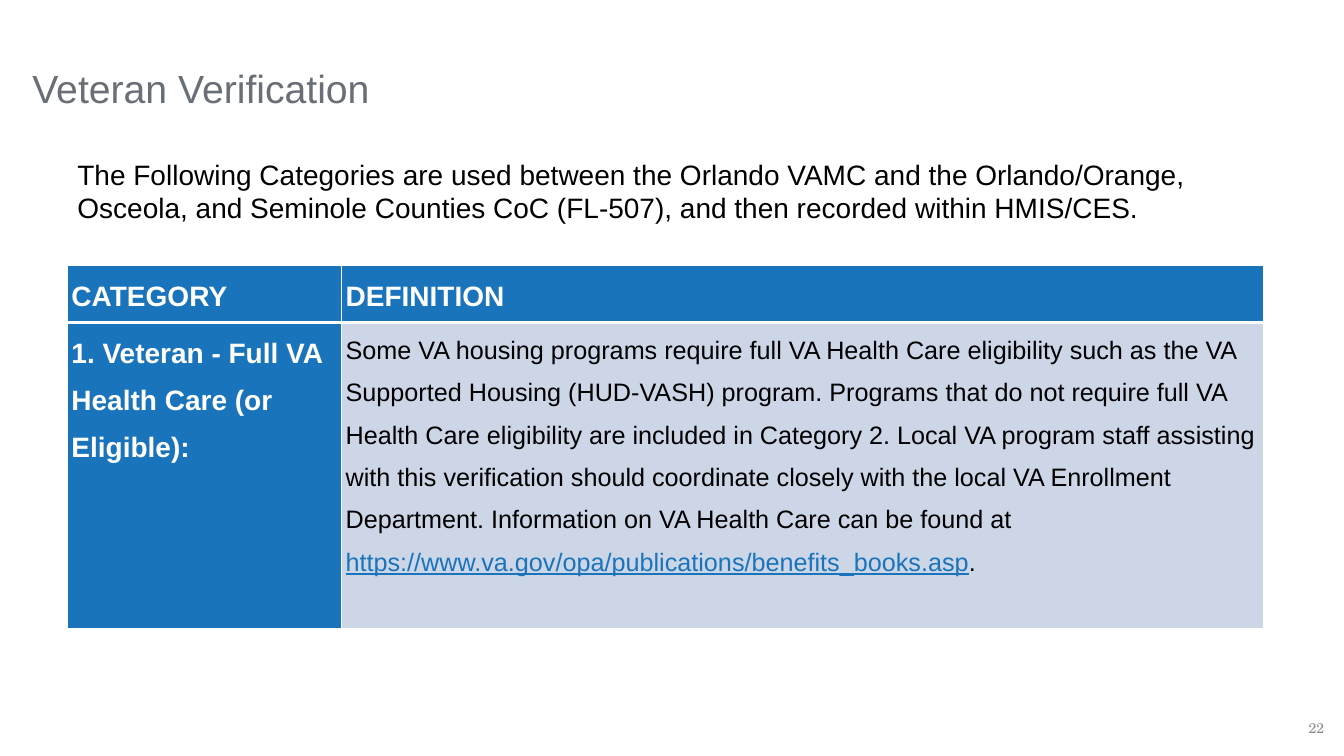
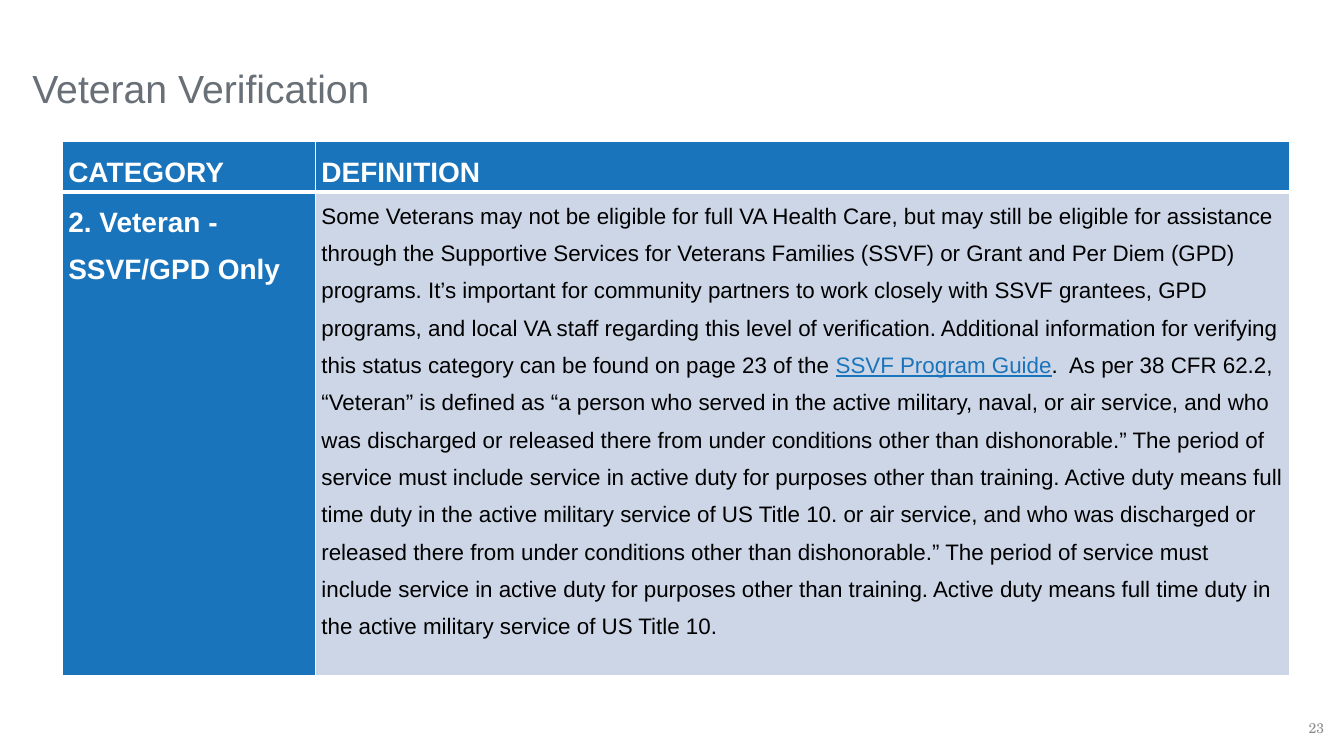
"""Build two Veteran Verification slides, each with a category table."""
from dataclasses import dataclass

from lxml.etree import SubElement
from pptx import Presentation
from pptx.dml.color import RGBColor as RGB
from pptx.enum.text import MSO_ANCHOR as Anchor, PP_ALIGN as Align
from pptx.oxml.ns import qn
from pptx.util import Cm, Pt


@dataclass(frozen=True)
class Theme:
    font: str = "Arial"
    number_font: str = "TeX Gyre Schola"
    title: str = "686F76"
    number: str = "8C8C8C"
    blue: str = "1A74BB"
    pale: str = "CDD6E7"
    white: str = "FFFFFF"
    black: str = "000000"
    title_size: int = 28
    text_size: int = 20
    number_size: int = 10
    thin: int = 1
    thick: int = 3
    spacing: float = 1.5


T = Theme()
TITLE = "Veteran Verification"
HEADER = ["CATEGORY", "DEFINITION"]
FIRST_NUMBER = 22
TITLE_BOX = (0.56, 0.2, 25.96, 2.74)
NUMBER_BOX = (32.2, 17.83, 1.42, 1.02)
INTRO_BOX = (1.7, 3.84, 30.15, 1.96)

SLIDES = [
    {
        "intro": "The Following Categories are used between the Orlando VAMC and the "
                 "Orlando/Orange, Osceola, and Seminole Counties CoC (FL-507), and then "
                 "recorded within HMIS/CES.",
        "category": "1. Veteran - Full VA Health Care (or Eligible):",
        "definition": [
            "Some VA housing programs require full VA Health Care eligibility such as the "
            "VA Supported Housing (HUD-VASH) program. Programs that do not require full VA "
            "Health Care eligibility are included in Category 2. Local VA program staff "
            "assisting with this verification should coordinate closely with the local VA "
            "Enrollment Department. Information on VA Health Care can be found at ",
            "https://www.va.gov/opa/publications/benefits_books.asp",
            ".",
        ],
        "at": (1.7, 6.68), "cols": (6.91, 23.24), "rows": (1.45, 7.72),
        "inset": 0.1, "size": 18,
    },
    {
        "category": "2. Veteran - SSVF/GPD Only",
        "definition": [
            "Some Veterans may not be eligible for full VA Health Care, but may still be "
            "eligible for assistance through the Supportive Services for Veterans Families "
            "(SSVF) or Grant and Per Diem (GPD) programs. It’s important for community "
            "partners to work closely with SSVF grantees, GPD programs, and local VA staff "
            "regarding this level of verification. Additional information for verifying "
            "this status category can be found on page 23 of the ",
            "SSVF Program Guide",
            ".  As per 38 CFR 62.2, “Veteran” is defined as “a person who served in the "
            "active military, naval, or air service, and who was discharged or released "
            "there from under conditions other than dishonorable.” The period of service "
            "must include service in active duty for purposes other than training. Active "
            "duty means full time duty in the active military service of US Title 10. or "
            "air service, and who was discharged or released there from under conditions "
            "other than dishonorable.” The period of service must include service in active "
            "duty for purposes other than training. Active duty means full time duty in the "
            "active military service of US Title 10.",
        ],
        "at": (1.57, 3.56), "cols": (6.38, 24.56), "rows": (1.17, 11.28),
        "inset": 0.15, "size": 16,
    },
]


def apply(obj, **formats):
    for name, value in formats.items():
        setattr(obj, name, value)


def add_run(p, text, size, color, name=T.font, **formats):
    r = p.add_run()
    r.text = text
    apply(r.font, name=name, size=Pt(size), **formats)
    r.font.color.rgb = RGB.from_string(color)


def add_box(s, box, anchor=Anchor.TOP):
    tf = s.shapes.add_textbox(*map(Cm, box)).text_frame
    apply(tf, word_wrap=True, vertical_anchor=anchor)
    return tf.paragraphs[0]


def add_borders(cell, widths):
    tc_pr = cell._tc.get_or_add_tcPr()
    for side, width in widths.items():
        ln = SubElement(tc_pr, qn(f"a:ln{side}"), w=str(Pt(width)))
        fill = SubElement(ln, qn("a:solidFill"))
        SubElement(fill, qn("a:srgbClr"), val=T.white)


def format_cell(cell, fill, inset, top, bottom):
    add_borders(cell, {"L": T.thin, "R": T.thin, "T": top, "B": bottom})
    apply(cell, margin_left=Cm(inset), margin_right=Cm(inset),
          margin_top=0, margin_bottom=0, vertical_anchor=Anchor.TOP)
    cell.fill.solid()
    cell.fill.fore_color.rgb = RGB.from_string(fill)
    p = cell.text_frame.paragraphs[0]
    p.line_spacing = T.spacing
    return p


def add_category_table(s, data):
    cols, rows = data["cols"], data["rows"]
    size = (sum(cols), sum(rows))
    table = s.shapes.add_table(2, 2, *map(Cm, data["at"] + size)).table
    table.horz_banding = False
    for col, width in zip(table.columns, cols):
        col.width = Cm(width)
    for row, height in zip(table.rows, rows):
        row.height = Cm(height)

    inset = data["inset"]
    labels = [(0, 0, HEADER[0]), (0, 1, HEADER[1]), (1, 0, data["category"])]
    for row, col, text in labels:
        edges = (T.thick, T.thin) if row else (T.thin, T.thick)
        p = format_cell(table.cell(row, col), T.blue, inset, *edges)
        add_run(p, text, T.text_size, T.white, bold=True)

    p = format_cell(table.cell(1, 1), T.pale, inset, T.thick, T.thin)
    before, link, after = data["definition"]
    add_run(p, before, data["size"], T.black, bold=False)
    add_run(p, link, data["size"], T.blue, bold=False, underline=True)
    add_run(p, after, data["size"], T.black, bold=False)


def add_frame(s, number):
    title = s.shapes.title
    left, top, width, height = map(Cm, TITLE_BOX)
    apply(title, left=left, top=top, width=width, height=height)
    apply(title.text_frame, vertical_anchor=Anchor.BOTTOM, word_wrap=True)
    p = title.text_frame.paragraphs[0]
    p.alignment = Align.LEFT
    add_run(p, TITLE, T.title_size, T.title)

    p = add_box(s, NUMBER_BOX, Anchor.MIDDLE)
    p.alignment = Align.RIGHT
    add_run(p, str(number), T.number_size, T.number, T.number_font)


def main():
    prs = Presentation()
    apply(prs, slide_width=Cm(33.87), slide_height=Cm(19.05))
    layout = prs.slide_layouts.get_by_name("Title Only")
    for number, data in enumerate(SLIDES, FIRST_NUMBER):
        s = prs.slides.add_slide(layout)
        add_frame(s, number)
        add_category_table(s, data)
        if "intro" in data:
            add_run(add_box(s, INTRO_BOX), data["intro"], T.text_size, T.black)
    prs.save("out.pptx")


if __name__ == "__main__":
    main()
